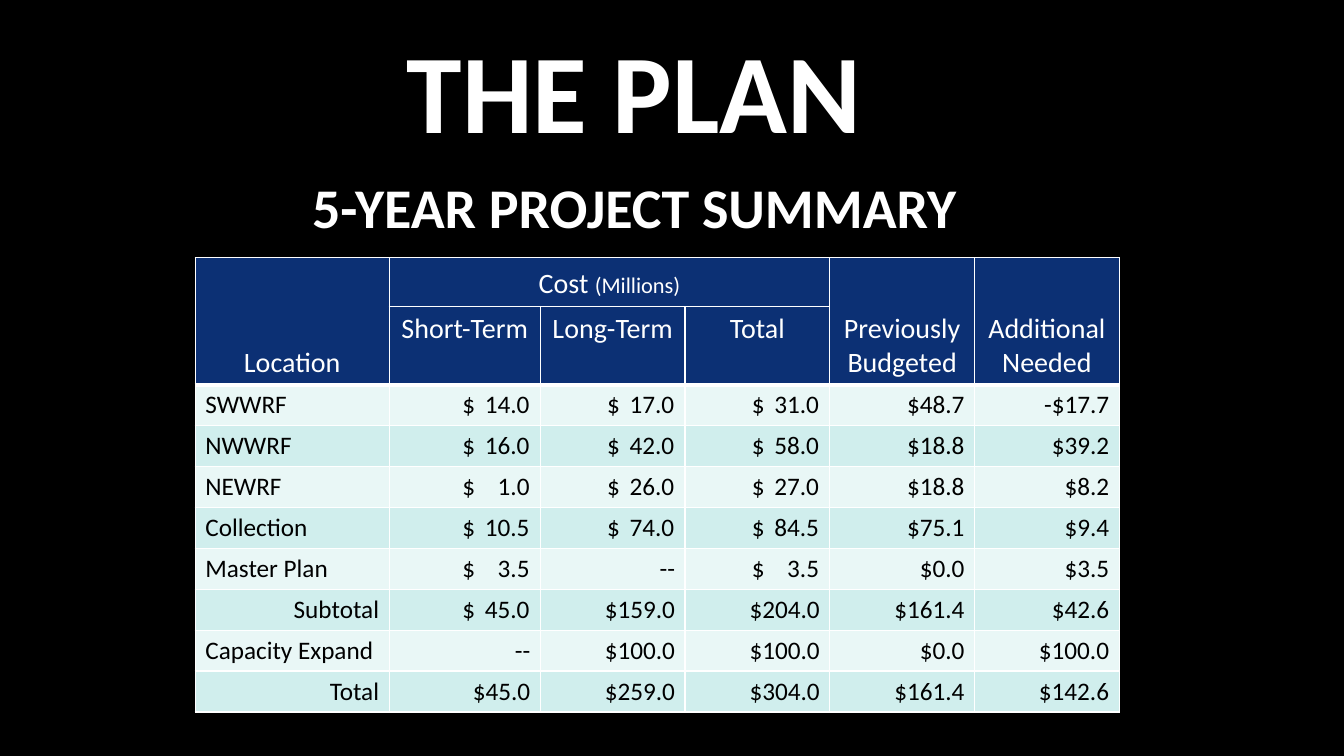
from dataclasses import dataclass

import lxml.etree
import pptx
import pptx.dml.color
import pptx.enum.text
import pptx.oxml
import pptx.oxml.ns
import pptx.slide
import pptx.table
import pptx.text.text
import pptx.util

Pt = pptx.util.Pt
Align = pptx.enum.text.PP_ALIGN
Anchor = pptx.enum.text.MSO_ANCHOR


@dataclass(frozen=True)
class Theme:
    font: str = "Calibri"
    background: str = "000000"
    light_text: str = "FFFFFF"
    dark_text: str = "000000"
    border: str = "FFFFFF"
    header_fill: str = "0C3074"
    band_fills: tuple[str, str] = ("E9F7F6", "D0EEED")
    title_size: float = 80
    subtitle_size: float = 40
    header_size: float = 20
    unit_size: float = 16
    body_size: float = 18
    border_width: float = 1
    rule_width: float = 3


@dataclass(frozen=True)
class HeaderCell:
    text: str
    row: int
    column: int
    row_span: int = 1
    column_span: int = 1
    anchor: Anchor = Anchor.BOTTOM
    unit: str = ""


@dataclass(frozen=True)
class CostRow:
    location: str
    amounts: tuple[str, ...]
    is_sum: bool = False


THEME = Theme()
COLUMN_WIDTHS = [138.5, 108] + [103.4] * 4
HEADER_HEIGHTS = [35, 56]
BODY_HEIGHT = 29.2
CELL_MARGIN = 7.2
DOLLAR_OFFSET = 55.7  # from the right edge of a cell to its aligned dollar sign
TAB_CLEARANCE = 0.5  # keeps the right tab stop inside the text area

HEADERS = [
    HeaderCell("Location", 0, 0, row_span=2),
    HeaderCell("Cost ", 0, 1, column_span=3, unit="(Millions)"),
    HeaderCell("Previously\nBudgeted", 0, 4, row_span=2),
    HeaderCell("Additional Needed", 0, 5, row_span=2),
    HeaderCell("Short-Term", 1, 1, anchor=Anchor.TOP),
    HeaderCell("Long-Term", 1, 2, anchor=Anchor.TOP),
    HeaderCell("Total", 1, 3, anchor=Anchor.TOP),
]

# A space after the dollar sign marks an amount whose sign is aligned by tab.
COSTS = [
    CostRow("SWWRF", ("$ 14.0", "$ 17.0", "$ 31.0", "$48.7", "-$17.7")),
    CostRow("NWWRF", ("$ 16.0", "$ 42.0", "$ 58.0", "$18.8", "$39.2")),
    CostRow("NEWRF", ("$ 1.0", "$ 26.0", "$ 27.0", "$18.8", "$8.2")),
    CostRow("Collection", ("$ 10.5", "$ 74.0", "$ 84.5", "$75.1", "$9.4")),
    CostRow("Master Plan", ("$ 3.5", "--", "$ 3.5", "$0.0", "$3.5")),
    CostRow("Subtotal", ("$ 45.0", "$159.0", "$204.0", "$161.4", "$42.6"), True),
    CostRow("Capacity Expand", ("--", "$100.0", "$100.0", "$0.0", "$100.0")),
    CostRow("Total", ("$45.0", "$259.0", "$304.0", "$161.4", "$142.6"), True),
]


def rgb(value: str) -> pptx.dml.color.RGBColor:
    return pptx.dml.color.RGBColor.from_string(value)


def style_run(run: pptx.text.text._Run, size: float, color: str, bold: bool = False) -> None:
    run.font.name = THEME.font
    run.font.size = Pt(size)
    run.font.bold = bold
    run.font.color.rgb = rgb(color)


def set_borders(cell: pptx.table._Cell, top: float, bottom: float) -> None:
    """Line all four sides; the side lines keep the theme's width."""
    properties = cell._tc.get_or_add_tcPr()
    widths = {"lnL": THEME.border_width, "lnR": THEME.border_width, "lnT": top, "lnB": bottom}
    for position, (side, width) in enumerate(widths.items()):
        line = pptx.oxml.parse_xml(
            f'<a:{side} {pptx.oxml.ns.nsdecls("a")} w="{int(Pt(width))}"><a:solidFill>'
            f'<a:srgbClr val="{THEME.border}"/></a:solidFill></a:{side}>'
        )
        properties.insert(position, line)


def paint_cell(cell: pptx.table._Cell, fill: str, top: float, bottom: float) -> None:
    cell.fill.solid()
    cell.fill.fore_color.rgb = rgb(fill)
    set_borders(cell, top, bottom)


def write_cell(cell: pptx.table._Cell, text: str, align: Align, size: float, color: str) -> None:
    cell.text_frame.text = text
    for para in cell.text_frame.paragraphs:
        para.alignment = align
        for run in para.runs:
            style_run(run, size, color)


def write_amount(cell: pptx.table._Cell, amount: str, width: float) -> None:
    """Right-align an amount, or set its dollar sign and figure on two tab stops."""
    if " " not in amount:
        write_cell(cell, amount, Align.RIGHT, THEME.body_size, THEME.dark_text)
        return
    text = "\t" + amount.replace(" ", "\t")
    write_cell(cell, text, Align.LEFT, THEME.body_size, THEME.dark_text)
    properties = cell.text_frame.paragraphs[0]._p.get_or_add_pPr()
    tabs = lxml.etree.SubElement(properties, pptx.oxml.ns.qn("a:tabLst"))
    dollar_stop = width - DOLLAR_OFFSET - CELL_MARGIN
    figure_stop = width - 2 * CELL_MARGIN - TAB_CLEARANCE
    for position, align in [(dollar_stop, "l"), (figure_stop, "r")]:
        lxml.etree.SubElement(
            tabs, pptx.oxml.ns.qn("a:tab"), pos=str(int(Pt(position))), algn=align
        )


def add_title(page: pptx.slide.Slide) -> None:
    box = page.shapes.add_textbox(Pt(54), Pt(48.2), Pt(798), Pt(63.4))
    frame = box.text_frame
    frame.word_wrap = True
    frame.vertical_anchor = Anchor.TOP
    frame.margin_top = Pt(3.2)
    frame.text = "THE PLAN\v5-YEAR PROJECT SUMMARY"
    para = frame.paragraphs[0]
    para.alignment = Align.CENTER
    para.line_spacing = Pt(60)
    for run, size in zip(para.runs, (THEME.title_size, THEME.subtitle_size)):
        style_run(run, size, THEME.light_text, bold=True)


def fill_header(table: pptx.table.Table) -> None:
    last_row = len(HEADER_HEIGHTS) - 1
    for row in range(len(HEADER_HEIGHTS)):
        bottom = THEME.rule_width if row == last_row else THEME.border_width
        for column in range(len(COLUMN_WIDTHS)):
            paint_cell(table.cell(row, column), THEME.header_fill, THEME.border_width, bottom)
    for header in HEADERS:
        cell = table.cell(header.row, header.column)
        end_row = header.row + header.row_span - 1
        end_column = header.column + header.column_span - 1
        if (end_row, end_column) != (header.row, header.column):
            cell.merge(table.cell(end_row, end_column))
        cell.vertical_anchor = header.anchor
        write_cell(cell, header.text, Align.CENTER, THEME.header_size, THEME.light_text)
        if header.unit:
            span = cell.text_frame.paragraphs[0].add_run()
            span.text = header.unit
            style_run(span, THEME.unit_size, THEME.light_text)


def fill_body(table: pptx.table.Table) -> None:
    for index, cost in enumerate(COSTS):
        row = index + len(HEADER_HEIGHTS)
        top = THEME.border_width if index else THEME.rule_width
        for column in range(len(COLUMN_WIDTHS)):
            paint_cell(table.cell(row, column), THEME.band_fills[index % 2], top, THEME.border_width)
        align = Align.RIGHT if cost.is_sum else Align.LEFT
        write_cell(table.cell(row, 0), cost.location, align, THEME.body_size, THEME.dark_text)
        for column, amount in enumerate(cost.amounts, start=1):
            write_amount(table.cell(row, column), amount, COLUMN_WIDTHS[column])


def add_cost_table(page: pptx.slide.Slide) -> None:
    heights = HEADER_HEIGHTS + [BODY_HEIGHT] * len(COSTS)
    table = page.shapes.add_table(
        len(heights), len(COLUMN_WIDTHS),
        Pt(139.5), Pt(184), Pt(sum(COLUMN_WIDTHS)), Pt(sum(heights)),
    ).table
    for column, width in zip(table.columns, COLUMN_WIDTHS):
        column.width = Pt(width)
    for row, height in zip(table.rows, heights):
        row.height = Pt(height)
    table.first_row = table.horz_banding = False
    fill_header(table)
    fill_body(table)


def main() -> None:
    deck = pptx.Presentation()
    deck.slide_width, deck.slide_height = Pt(960), Pt(540)
    page = deck.slides.add_slide(deck.slide_layouts[6])
    page.background.fill.solid()
    page.background.fill.fore_color.rgb = rgb(THEME.background)
    add_title(page)
    add_cost_table(page)
    deck.save("out.pptx")


if __name__ == "__main__":
    main()
